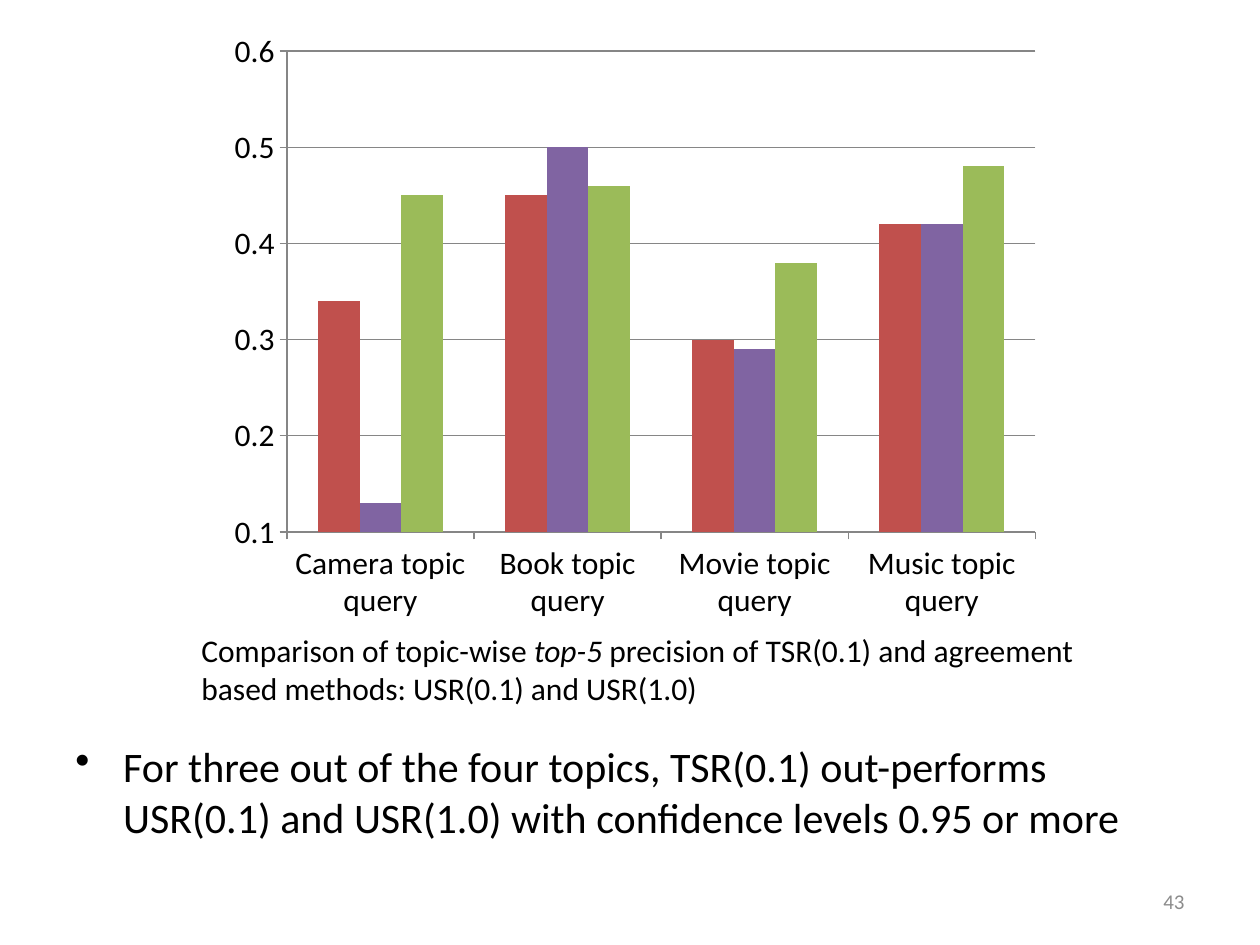
from lxml import etree
from pptx import Presentation
from pptx.chart.data import CategoryChartData
from pptx.dml.color import RGBColor
from pptx.enum.chart import XL_CHART_TYPE, XL_TICK_MARK
from pptx.enum.text import MSO_ANCHOR, PP_ALIGN
from pptx.oxml.ns import qn
from pptx.util import Inches, Pt

TOPICS = ["Camera topic query", "Book topic query", "Movie topic query", "Music topic query"]
METHODS = [
    ("USR(0.1)", (0.34, 0.45, 0.3, 0.42), "C0504D"),
    ("USR(1.0)", (0.13, 0.5, 0.29, 0.42), "8064A2"),
    ("TSR(0.1)", (0.45, 0.46, 0.38, 0.48), "9BBB59"),
]
CAPTION = [
    ("Comparison of topic-wise ", False),
    ("top-5 ", True),
    ("precision of TSR(0.1) and agreement based methods: USR(0.1) and USR(1.0)", False),
]
FINDING = [(
    "For three out of the four topics, TSR(0.1) out-performs "
    "USR(0.1) and USR(1.0) with confidence levels 0.95 or more", False)]
PAGE = [("43", False)]

THEME = {
    "font": "Calibri", "text": "000000", "muted": "8C8C8C", "axis": "868686",
    "body": 24, "label": 18, "page": 12,
}
PLOT_AREA = {"x": 0.09, "y": 0.05, "w": 0.88, "h": 0.81}


def style_font(font, size, color=THEME["text"]):
    font.name = THEME["font"]
    font.size = Pt(size)
    font.color.rgb = RGBColor.from_string(color)


def add_text(slide, box, runs, size, color=THEME["text"]):
    """Add a wrapped text box of (text, italic) runs and return its frame."""
    frame = slide.shapes.add_textbox(*map(Inches, box)).text_frame
    frame.word_wrap = True
    paragraph = frame.paragraphs[0]
    style_font(paragraph.font, size, color)
    for text, italic in runs:
        run = paragraph.add_run()
        run.text = text
        if italic:
            run.font.italic = True
    return frame


def add_bullet(paragraph, indent):
    properties = paragraph._p.get_or_add_pPr()
    properties.set("marL", str(Inches(indent)))
    properties.set("indent", str(-Inches(indent)))
    bullet = etree.Element(qn("a:buChar"), char="•")
    defaults = properties.find(qn("a:defRPr"))
    if defaults is None:
        properties.append(bullet)
    else:
        defaults.addprevious(bullet)


def fix_plot_area(chart):
    """Pin the inner plot area to fixed fractions of the chart."""
    plot_area = chart._chartSpace.find(".//" + qn("c:plotArea"))
    layout = plot_area.find(qn("c:layout"))
    if layout is None:
        layout = etree.Element(qn("c:layout"))
        plot_area.insert(0, layout)
    manual = etree.SubElement(layout, qn("c:manualLayout"))
    settings = [("layoutTarget", "inner"), ("xMode", "edge"), ("yMode", "edge")]
    for tag, value in settings + list(PLOT_AREA.items()):
        etree.SubElement(manual, qn(f"c:{tag}"), val=str(value))


def style_line(line):
    line.color.rgb = RGBColor.from_string(THEME["axis"])
    line.width = Pt(0.75)


def add_precision_chart(slide, box):
    data = CategoryChartData()
    data.categories = TOPICS
    for name, values, _ in METHODS:
        data.add_series(name, values)
    chart = slide.shapes.add_chart(
        XL_CHART_TYPE.COLUMN_CLUSTERED, *map(Inches, box), data).chart
    chart.has_legend = False
    chart.has_title = False
    style_font(chart.font, THEME["label"])

    plot = chart.plots[0]
    plot.gap_width, plot.overlap = 150, 0
    plot.vary_by_categories = False
    for series, (_, _, color) in zip(plot.series, METHODS):
        series.format.fill.solid()
        series.format.fill.fore_color.rgb = RGBColor.from_string(color)

    for axis in (chart.category_axis, chart.value_axis):
        axis.major_tick_mark = XL_TICK_MARK.OUTSIDE
        axis.minor_tick_mark = XL_TICK_MARK.NONE
        style_line(axis.format.line)
    precision = chart.value_axis
    precision.minimum_scale, precision.maximum_scale = 0.1, 0.6
    precision.major_unit = 0.1
    precision.tick_labels.number_format = "0.0"
    precision.tick_labels.number_format_is_linked = False
    style_line(precision.major_gridlines.format.line)
    fix_plot_area(chart)


def main():
    deck = Presentation()
    deck.slide_width, deck.slide_height = Inches(10), Inches(7.5)
    slide = deck.slides.add_slide(deck.slide_layouts[6])

    add_precision_chart(slide, (1.67, 0.17, 6.75, 4.75))
    add_text(slide, (1.5, 4.96, 7.33, 0.71), CAPTION, THEME["label"])

    finding = add_text(slide, (0.5, 5.83, 9, 1.5), FINDING, THEME["body"]).paragraphs[0]
    finding.space_before = Pt(5)
    add_bullet(finding, 0.38)

    page = add_text(slide, (7.17, 6.95, 2.33, 0.4), PAGE, THEME["page"], THEME["muted"])
    page.vertical_anchor = MSO_ANCHOR.MIDDLE
    page.paragraphs[0].alignment = PP_ALIGN.RIGHT

    deck.save("out.pptx")


if __name__ == "__main__":
    main()
